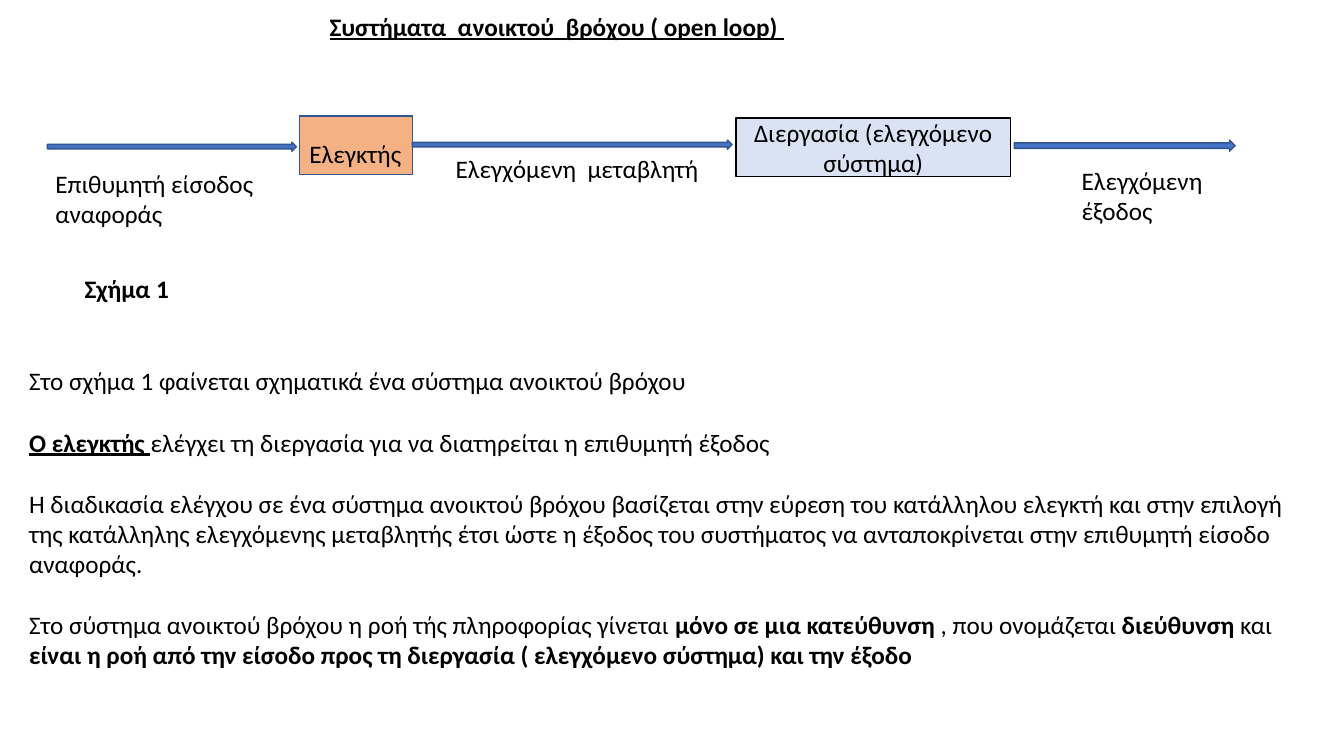
from dataclasses import dataclass

from pptx import Presentation
from pptx.dml.color import RGBColor
from pptx.enum.shapes import MSO_SHAPE
from pptx.enum.text import MSO_ANCHOR, PP_ALIGN
from pptx.util import Emu, Pt

RECTANGLE = MSO_SHAPE.RECTANGLE
RIGHT_ARROW = MSO_SHAPE.RIGHT_ARROW
MIDDLE = MSO_ANCHOR.MIDDLE
CENTER = PP_ALIGN.CENTER
LEFT = PP_ALIGN.LEFT
EMU_PER_PX = 9144


@dataclass(frozen=True)
class Theme:
    font: str = "Calibri"
    text_size: int = 18
    paragraph_gap: int = 22
    text: str = "000000"
    arrow: str = "4472C4"
    outline: str = "325491"
    controller: str = "F4B183"
    process: str = "DAE3F3"


THEME = Theme()

EXPLANATION = [
    [("Στο σχήμα 1 φαίνεται σχηματικά ένα σύστημα ανοικτού βρόχου", "")],
    [("Ο ελεγκτής ", "bu"),
     ("ελέγχει τη διεργασία για να διατηρείται η επιθυμητή έξοδος", "")],
    [("Η διαδικασία ελέγχου σε ένα σύστημα ανοικτού βρόχου βασίζεται στην "
      "εύρεση του κατάλληλου ελεγκτή και στην επιλογή της κατάλληλης "
      "ελεγχόμενης μεταβλητής έτσι ώστε η έξοδος του συστήματος να "
      "ανταποκρίνεται στην επιθυμητή είσοδο αναφοράς.", "")],
    [("Στο σύστημα ανοικτού βρόχου η ροή τής πληροφορίας γίνεται ", ""),
     ("μόνο σε μια κατεύθυνση", "b"),
     (" , που ονομάζεται ", ""),
     ("διεύθυνση", "b"),
     (" και ", ""),
     ("είναι η ροή από την είσοδο προς τη διεργασία ( ελεγχόμενο σύστημα) "
      "και την έξοδο", "b")],
]


def px(*lengths):
    return [Emu(length * EMU_PER_PX) for length in lengths]


def style_paragraph(paragraph, align=LEFT):
    paragraph.alignment = align
    paragraph.font.name = THEME.font
    paragraph.font.size = Pt(THEME.text_size)
    paragraph.font.color.rgb = RGBColor.from_string(THEME.text)


def add_text(slide, bounds, paragraphs, wrap=True, gap=0):
    """Each paragraph is a list of (wording, marks): b is bold, u underlined."""
    frame = slide.shapes.add_textbox(*px(*bounds)).text_frame
    frame.word_wrap = wrap
    for index, pieces in enumerate(paragraphs):
        paragraph = frame.add_paragraph() if index else frame.paragraphs[0]
        style_paragraph(paragraph)
        if index and gap:
            paragraph.space_before = Pt(gap)
        for wording, marks in pieces:
            run = paragraph.add_run()
            run.text = wording
            if len(pieces) > 1:
                font = run.font
            else:
                font = paragraph.font
            font.bold = "b" in marks
            font.underline = "u" in marks


def add_label(slide, bounds, *lines, marks="", wrap=True):
    add_text(slide, bounds, [[(line, marks)] for line in lines], wrap)


def add_figure(slide, preset, bounds, fill, outline=THEME.outline):
    figure = slide.shapes.add_shape(preset, *px(*bounds))
    figure.shadow.inherit = False
    figure.fill.solid()
    figure.fill.fore_color.rgb = RGBColor.from_string(fill)
    figure.line.color.rgb = RGBColor.from_string(outline)
    figure.line.width = Pt(1)
    return figure


def add_arrow(slide, *bounds):
    add_figure(slide, RIGHT_ARROW, bounds, THEME.arrow)


def add_process(slide, bounds, wording):
    process = add_figure(slide, RECTANGLE, bounds, THEME.process, THEME.text)
    frame = process.text_frame
    frame.word_wrap = True
    frame.vertical_anchor = MIDDLE
    frame.text = wording
    style_paragraph(frame.paragraphs[0], CENTER)


def add_diagram(slide):
    add_process(slide, (730, 117, 272, 58), "Διεργασία (ελεγχόμενο σύστημα)")
    add_arrow(slide, 47, 141, 247, 9)
    add_arrow(slide, 1006, 139, 219, 11)
    add_label(slide, (45, 162, 232, 71), "Επιθυμητή είσοδος αναφοράς")
    add_label(slide, (442, 147, 285, 40), "Ελεγχόμενη  μεταβλητή")
    add_label(slide, (1063, 159, 147, 71), "Ελεγχόμενη", "έξοδος")
    add_label(slide, (74, 266, 105, 40), "Σχήμα 1", marks="b", wrap=False)
    add_figure(slide, RECTANGLE, (297, 115, 112, 58), THEME.controller)
    add_label(slide, (297, 132, 112, 40), "Ελεγκτής", wrap=False)
    add_arrow(slide, 409, 139, 317, 9)


def main():
    presentation = Presentation()
    presentation.slide_width, presentation.slide_height = px(1333, 750)
    slide = presentation.slides.add_slide(presentation.slide_layouts[6])
    add_label(slide, (317, 6, 1002, 40),
              "Συστήματα  ανοικτού  βρόχου ( open loop) ", marks="bu")
    add_diagram(slide)
    add_text(slide, (19, 358, 1300, 313), EXPLANATION, gap=THEME.paragraph_gap)
    presentation.save("out.pptx")


if __name__ == "__main__":
    main()
